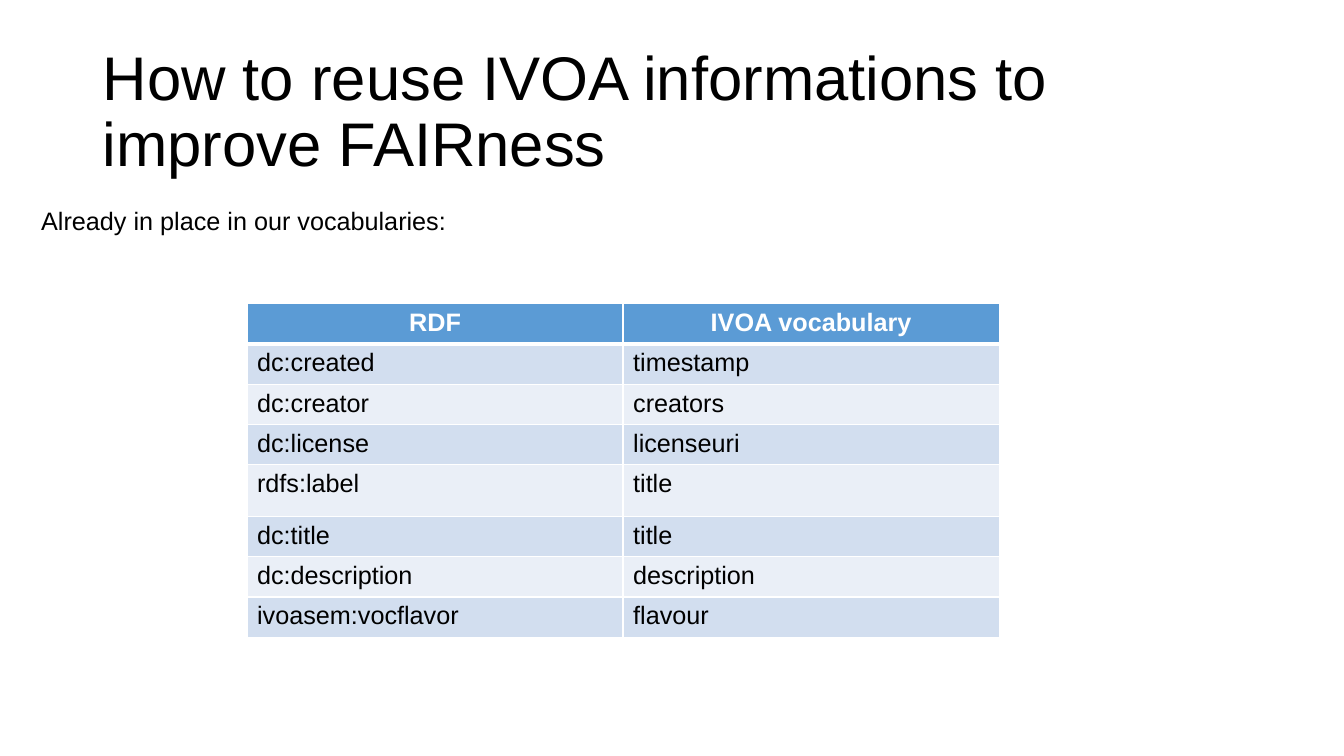
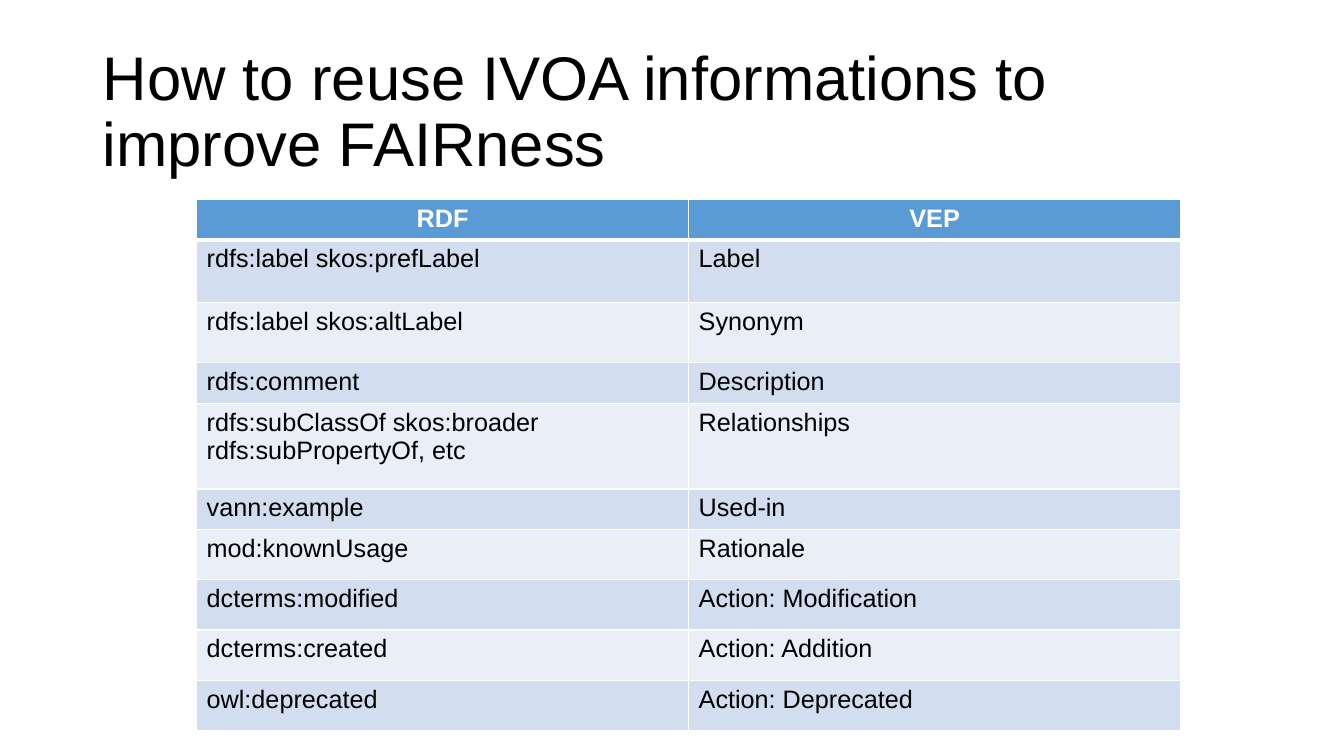
from lxml import etree
from pptx import Presentation
from pptx.dml.color import RGBColor
from pptx.enum.text import MSO_ANCHOR, PP_ALIGN
from pptx.oxml.ns import qn
from pptx.util import Inches, Pt

MIDDLE = MSO_ANCHOR.MIDDLE
CENTER = PP_ALIGN.CENTER
FONT = "Arial"
TITLE = "How to reuse IVOA informations to improve FAIRness"
COLORS = {
    "text": "000000",
    "white": "FFFFFF",
    "header": "5B9BD5",
    "odd_row": "D2DEEF",
    "even_row": "EAEFF7",
}

SLIDES = [
    {
        "intro": "Already in place in our vocabularies:",
        "left": 2.45,
        "top": 3.01,
        "column_width": 3.73,
        "rows": [
            ("RDF", "IVOA vocabulary", 0.37),
            ("dc:created", "timestamp", 0.4),
            ("dc:creator", "creators", 0.38),
            ("dc:license", "licenseuri", 0.38),
            ("rdfs:label", "title", 0.51),
            ("dc:title", "title", 0.38),
            ("dc:description", "description", 0.38),
            ("ivoasem:vocflavor", "flavour", 0.38),
        ],
    },
    {
        "intro": None,
        "left": 1.95,
        "top": 1.98,
        "column_width": 4.88,
        "rows": [
            ("RDF", "VEP", 0.37),
            ("rdfs:label skos:prefLabel", "Label", 0.62),
            ("rdfs:label skos:altLabel", "Synonym", 0.6),
            ("rdfs:comment", "Description", 0.38),
            ("rdfs:subClassOf skos:broader rdfs:subPropertyOf, etc", "Relationships", 0.85),
            ("vann:example", "Used-in", 0.38),
            ("mod:knownUsage", "Rationale", 0.5),
            ("dcterms:modified", "Action: Modification", 0.5),
            ("dcterms:created", "Action: Addition", 0.5),
            ("owl:deprecated", "Action: Deprecated", 0.5),
        ],
    },
]


def write_text(text_frame, text, size, color="text", bold=False):
    text_frame.text = text
    text_frame.word_wrap = True
    paragraph = text_frame.paragraphs[0]
    font = paragraph.runs[0].font
    font.name = FONT
    font.size = Pt(size)
    font.bold = bold
    font.color.rgb = RGBColor.from_string(COLORS[color])
    return paragraph


def add_borders(cell, widths):
    properties = cell._tc.get_or_add_tcPr()
    for side, width in widths.items():
        line = etree.SubElement(properties, qn(f"a:ln{side}"), w=str(Pt(width)))
        fill = etree.SubElement(line, qn("a:solidFill"))
        etree.SubElement(fill, qn("a:srgbClr"), val=COLORS["white"])


presentation = Presentation()
presentation.slide_width = Inches(13.33)
presentation.slide_height = Inches(7.5)
blank_layout = presentation.slide_layouts[6]

for content in SLIDES:
    slide = presentation.slides.add_slide(blank_layout)

    title = slide.shapes.add_textbox(Inches(0.92), Inches(0.4), Inches(11.5), Inches(1.45))
    title.text_frame.vertical_anchor = MIDDLE
    write_text(title.text_frame, TITLE, 44).line_spacing = 0.9

    rows = content["rows"]
    column_width = content["column_width"]
    table = slide.shapes.add_table(
        len(rows), 2, Inches(content["left"]), Inches(content["top"]),
        Inches(2 * column_width), Inches(sum(row[2] for row in rows)),
    ).table
    for column in table.columns:
        column.width = Inches(column_width)

    for row_index, (*texts, height) in enumerate(rows):
        table.rows[row_index].height = Inches(height)
        is_header = row_index == 0
        if is_header:
            fill_color = "header"
        else:
            fill_color = "odd_row" if row_index % 2 else "even_row"
        top_width = 3 if row_index == 1 else 1
        bottom_width = 3 if is_header else 1
        for column_index, text in enumerate(texts):
            cell = table.cell(row_index, column_index)
            add_borders(cell, {"L": 1, "R": 1, "T": top_width, "B": bottom_width})
            cell.fill.solid()
            cell.fill.fore_color.rgb = RGBColor.from_string(COLORS[fill_color])
            text_color = "white" if is_header else "text"
            paragraph = write_text(cell.text_frame, text, 18, text_color, is_header)
            if is_header:
                paragraph.alignment = CENTER

    if content["intro"]:
        intro = slide.shapes.add_textbox(Inches(0.31), Inches(1.99), Inches(4.81), Inches(0.4))
        write_text(intro.text_frame, content["intro"], 18)

presentation.save("out.pptx")
